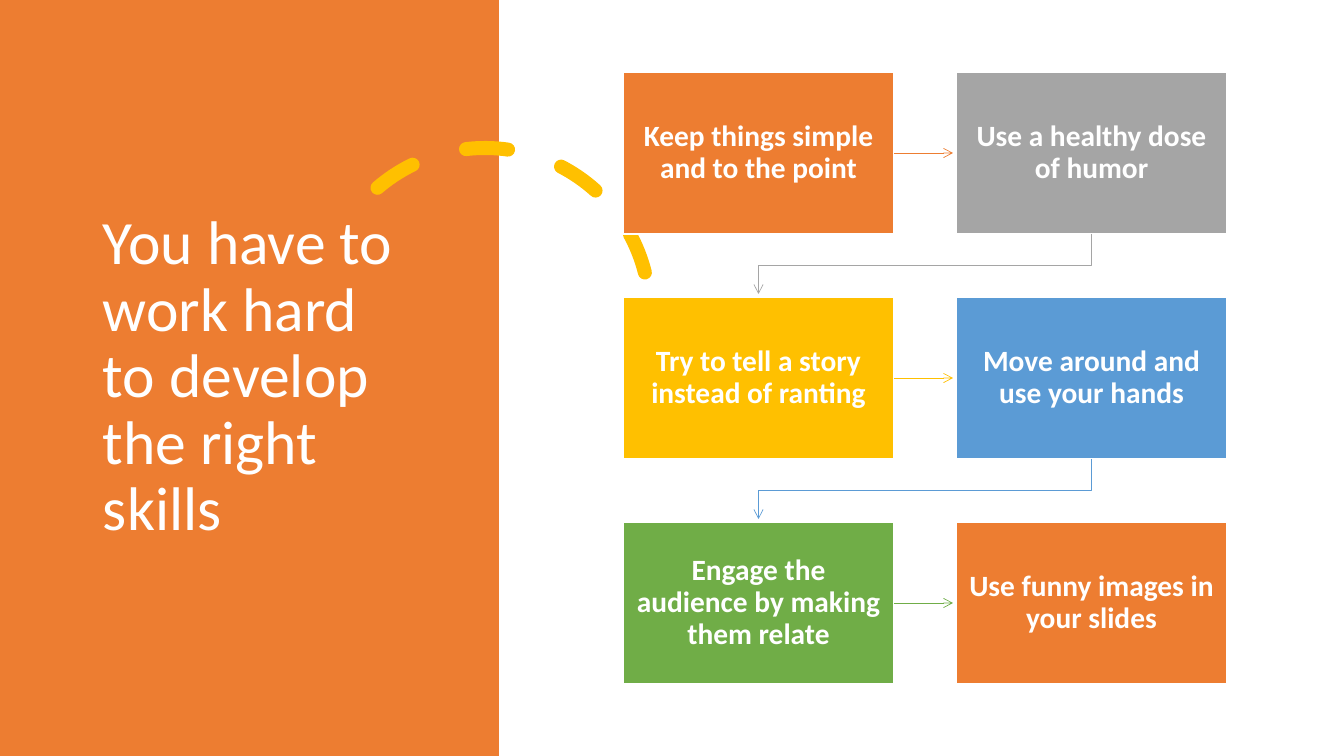
from pptx import Presentation
from pptx.dml.color import RGBColor
from pptx.enum.dml import MSO_LINE
from pptx.enum.shapes import MSO_CONNECTOR, MSO_SHAPE
from pptx.enum.text import MSO_ANCHOR, MSO_AUTO_SIZE, PP_ALIGN
from pptx.oxml.ns import qn
from pptx.util import Pt
from lxml import etree

WHITE = RGBColor(0xFF, 0xFF, 0xFF)
ORANGE = RGBColor(0xED, 0x7D, 0x31)
GRAY = RGBColor(0xA5, 0xA5, 0xA5)
GOLD = RGBColor(0xFF, 0xC0, 0x00)
BLUE = RGBColor(0x5B, 0x9B, 0xD5)
GREEN = RGBColor(0x70, 0xAD, 0x47)
RECTANGLE, ARC = MSO_SHAPE.RECTANGLE, MSO_SHAPE.ARC
STRAIGHT, DASH = MSO_CONNECTOR.STRAIGHT, MSO_LINE.DASH
MIDDLE, NO_FIT = MSO_ANCHOR.MIDDLE, MSO_AUTO_SIZE.NONE
LEFT, CENTER = PP_ALIGN.LEFT, PP_ALIGN.CENTER

TITLE = "You have to work hard to develop the right skills"
STEPS = [
    ("Keep things simple and to the point", ORANGE),
    ("Use a healthy dose of humor", GRAY),
    ("Try to tell a story instead of ranting", GOLD),
    ("Move around and use your hands", BLUE),
    ("Engage the audience by making them relate", GREEN),
    ("Use funny images in your slides", ORANGE),
]

SLIDE_WIDTH, SLIDE_HEIGHT = 1344, 756
PANEL_WIDTH = 499
TITLE_BOX = (93, 71, 325, 614)
ARC_BOX = (320, 148, 330, 330)
COLUMNS = 2
GRID_LEFT, GRID_TOP = 623, 72
COLUMN_PITCH, ROW_PITCH = 333, 225
STEP_WIDTH, STEP_HEIGHT = 271, 162
ARROW_GAP = 3
ELBOW_DROP = 31


def px(length):
    """Turn pixels into EMU."""
    return round(length * 914400 / 100.8)


def write(shape, text, size, bold=False, align=LEFT, inset=(10, 5)):
    """Fill a shape with one formatted paragraph."""
    frame = shape.text_frame
    frame.word_wrap = True
    frame.auto_size = NO_FIT
    frame.vertical_anchor = MIDDLE
    frame.margin_left = frame.margin_right = px(inset[0])
    frame.margin_top = frame.margin_bottom = px(inset[1])
    para = frame.paragraphs[0]
    para.alignment = align
    para.line_spacing = 0.9
    span = para.add_run()
    span.text = text
    span.font.name = "Calibri"
    span.font.size = Pt(size)
    span.font.bold = bold
    span.font.color.rgb = WHITE


def add_block(slide, kind, box, fill=None, line=None, width=1):
    """Add a flat preset shape."""
    shape = slide.shapes.add_shape(kind, *map(px, box))
    shape.shadow.inherit = False
    paint(shape, fill, line, width)
    return shape


def paint(shape, fill, line, width):
    """Set the fill and outline of a shape."""
    if fill is None:
        shape.fill.background()
    else:
        shape.fill.solid()
        shape.fill.fore_color.rgb = fill
    if line is None:
        shape.line.fill.background()
    else:
        shape.line.color.rgb = line
        shape.line.width = Pt(width)


def line_xml(shape):
    """Return the outline element of a shape."""
    return shape._element.spPr.find(qn("a:ln"))


def add_arrow(slide, points, color):
    """Add a thin arrow through the points, straight or stepped."""
    points = [(px(x), px(y)) for x, y in points]
    if len(points) == 2:
        arrow = slide.shapes.add_connector(STRAIGHT, *points[0], *points[1])
        arrow.line.color.rgb = color
        arrow.line.width = Pt(0.5)
        etree.SubElement(arrow._element.spPr, qn("a:effectLst"))
    else:
        builder = slide.shapes.build_freeform(*points[0])
        builder.add_line_segments(points[1:], close=False)
        arrow = builder.convert_to_shape()
        arrow.shadow.inherit = False
        paint(arrow, None, color, 0.5)
    etree.SubElement(line_xml(arrow), qn("a:tailEnd"), type="arrow")


def add_title(slide):
    """Add the colored panel, the dashed arc and the title."""
    add_block(slide, RECTANGLE, (0, 0, PANEL_WIDTH, SLIDE_HEIGHT), ORANGE)
    arc = add_block(slide, ARC, ARC_BOX, line=GOLD, width=10)
    arc.adjustments[0] = 146.13
    arc.adjustments[1] = 0
    arc.rotation = 345.8
    arc.line.dash_style = DASH
    line_xml(arc).set("cap", "rnd")
    title = slide.shapes.title
    title.left, title.top, title.width, title.height = map(px, TITLE_BOX)
    write(title, TITLE, 44)
    arc._element.addnext(title._element)


def add_steps(slide):
    """Add the grid of steps, each with an arrow to the next."""
    for index, (text, color) in enumerate(STEPS):
        row, column = divmod(index, COLUMNS)
        left = GRID_LEFT + column * COLUMN_PITCH
        top = GRID_TOP + row * ROW_PITCH
        right, bottom = left + STEP_WIDTH, top + STEP_HEIGHT
        center, middle = left + STEP_WIDTH / 2, top + STEP_HEIGHT / 2
        box = add_block(slide, RECTANGLE, (left, top, STEP_WIDTH, STEP_HEIGHT), color, WHITE)
        write(box, text, 21, bold=True, align=CENTER, inset=(13, 14))
        if column < COLUMNS - 1:
            end = left + COLUMN_PITCH - ARROW_GAP
            add_arrow(slide, [(right, middle), (end, middle)], color)
        elif index < len(STEPS) - 1:
            target = GRID_LEFT + STEP_WIDTH / 2
            turn = bottom + ELBOW_DROP
            end = top + ROW_PITCH - ARROW_GAP
            add_arrow(slide, [(center, bottom), (center, turn), (target, turn), (target, end)], color)


def main():
    """Build and save the deck."""
    deck = Presentation()
    deck.slide_width, deck.slide_height = px(SLIDE_WIDTH), px(SLIDE_HEIGHT)
    page = deck.slides.add_slide(deck.slide_layouts[5])
    add_title(page)
    add_steps(page)
    deck.save("out.pptx")


if __name__ == "__main__":
    main()
